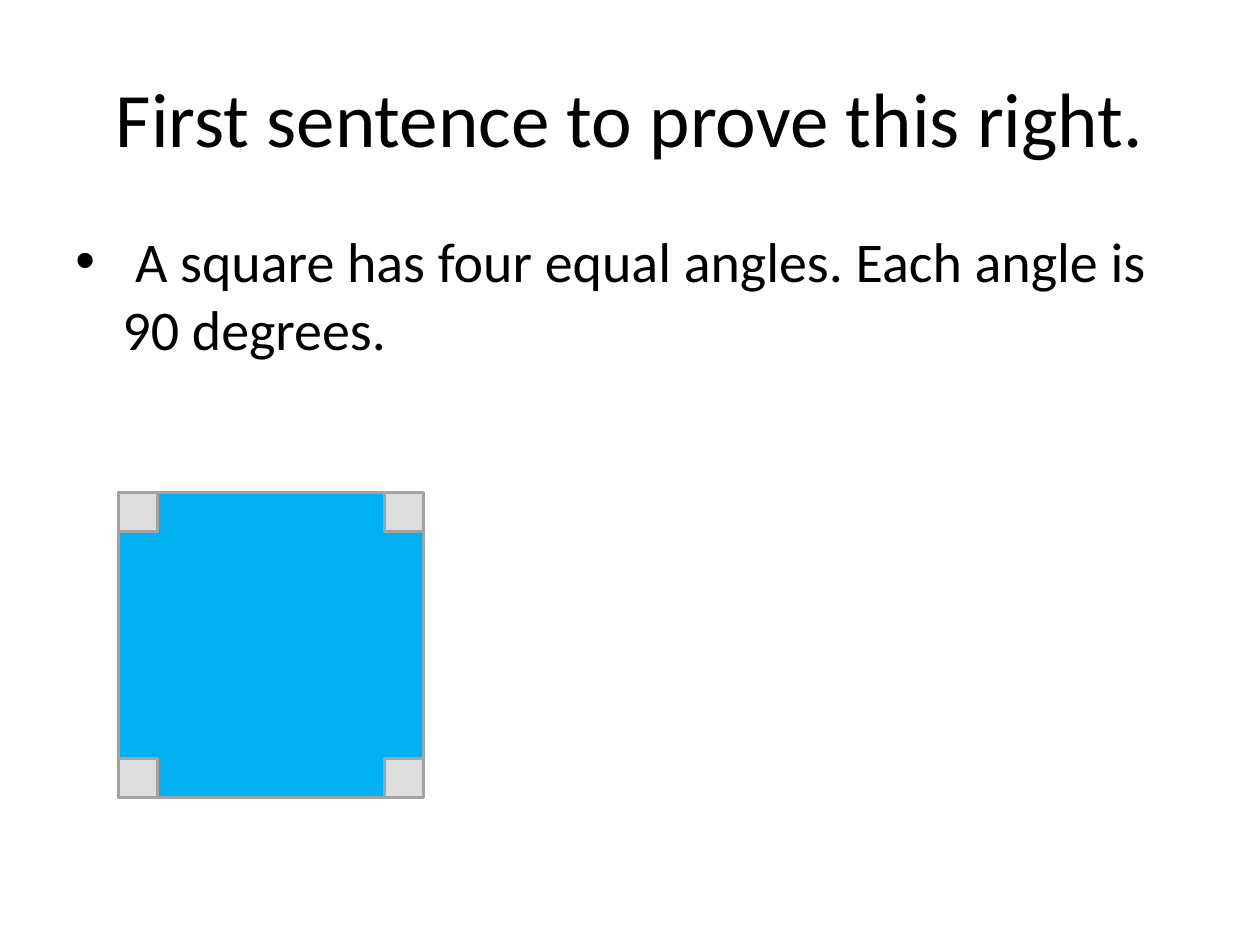
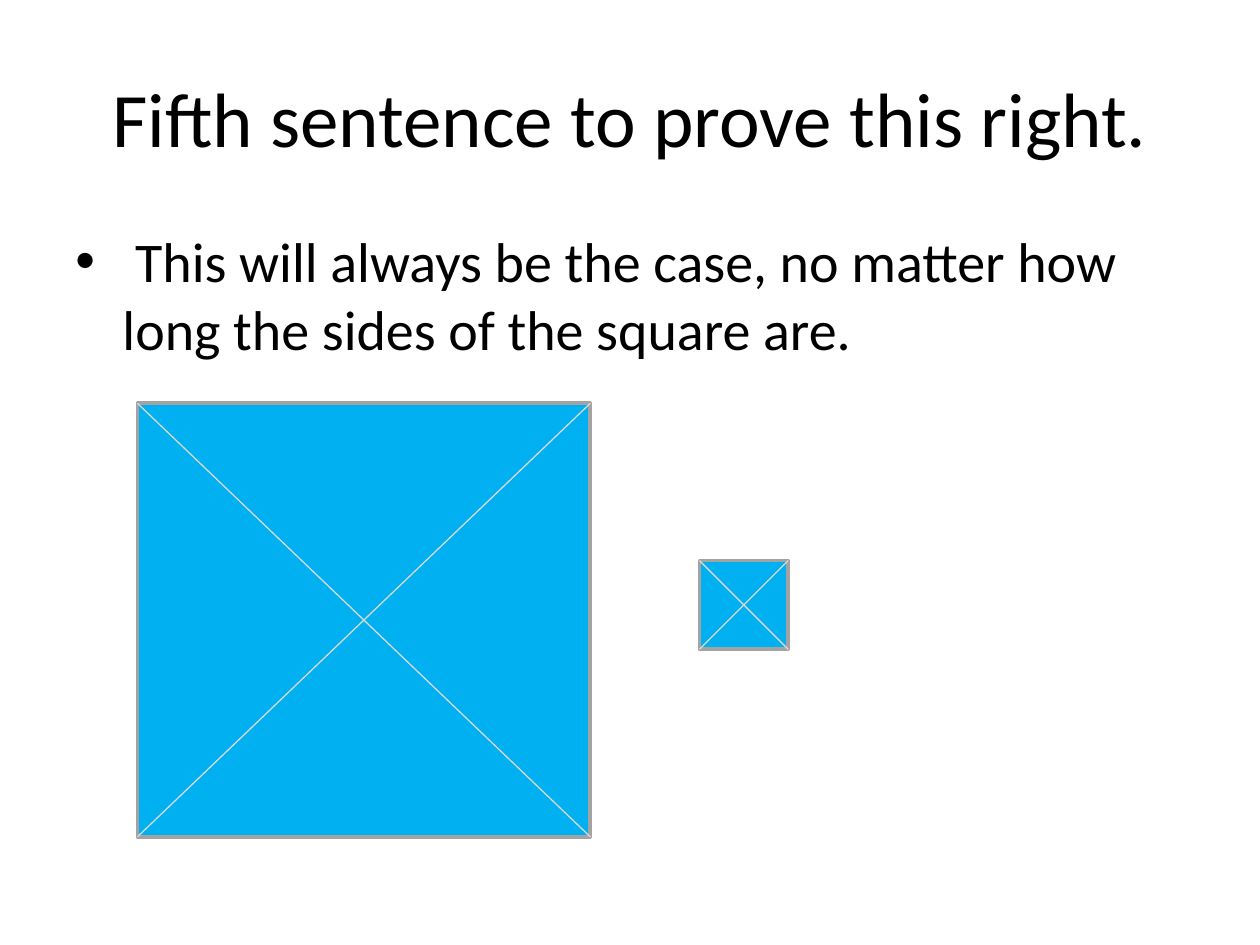
from dataclasses import dataclass
from itertools import product

from lxml.etree import SubElement
from pptx import Presentation
from pptx.dml.color import RGBColor
from pptx.enum.shapes import MSO_CONNECTOR, MSO_SHAPE
from pptx.enum.text import MSO_ANCHOR, PP_ALIGN
from pptx.oxml.ns import qn
from pptx.slide import Slide
from pptx.text.text import _Paragraph
from pptx.util import Cm, Pt

# Shared style
FONT = "Calibri"
BLACK, BLUE, OUTLINE = "000000", "00B0F0", "A3A3A3"
CORNER_FILL, DIAGONAL = "DDDDDD", "D8D8D8"
LEFT, WIDTH = 1.27, 22.86
INDENT = Cm(0.95)


@dataclass(frozen=True)
class Box:
    """A rectangle measured in centimetres."""
    left: float
    top: float
    width: float
    height: float

    @property
    def right(self) -> float:
        return self.left + self.width

    @property
    def bottom(self) -> float:
        return self.top + self.height

    def lengths(self) -> tuple[Cm, Cm, Cm, Cm]:
        return Cm(self.left), Cm(self.top), Cm(self.width), Cm(self.height)


TITLE_BOX = Box(LEFT, 0.76, WIDTH, 3.18)
BODY_BOX = Box(LEFT, 4.45, WIDTH, 12.57)


def rgb(color: str) -> RGBColor:
    return RGBColor.from_string(color)


def add_run(p: _Paragraph, text: str, size: int) -> None:
    r = p.add_run()
    r.text = text
    r.font.name, r.font.size = FONT, Pt(size)
    r.font.color.rgb = rgb(BLACK)


def add_bullet(p: _Paragraph) -> None:
    """Give the paragraph a hanging bullet and proportional space before."""
    pPr = p._p.get_or_add_pPr()
    pPr.set("marL", str(INDENT))
    pPr.set("indent", str(-INDENT))
    SubElement(SubElement(pPr, qn("a:spcBef")), qn("a:spcPct")).set("val", "20000")
    SubElement(pPr, qn("a:buFont")).set("typeface", "Arial")
    SubElement(pPr, qn("a:buChar")).set("char", "•")


def add_sentence_slide(prs: Presentation, title: str, sentence: str) -> Slide:
    s = prs.slides.add_slide(prs.slide_layouts.get_by_name("Title Only"))
    # Title
    sp = s.shapes.title
    sp.left, sp.top, sp.width, sp.height = TITLE_BOX.lengths()
    tf = sp.text_frame
    tf.vertical_anchor = MSO_ANCHOR.MIDDLE
    p = tf.paragraphs[0]
    p.alignment = PP_ALIGN.CENTER
    add_run(p, title, 44)
    # Bulleted sentence
    tf = s.shapes.add_textbox(*BODY_BOX.lengths()).text_frame
    tf.word_wrap = True
    p = tf.paragraphs[0]
    add_bullet(p)
    add_run(p, sentence, 32)
    return s


def add_square(s: Slide, box: Box, fill: str = BLUE) -> None:
    sp = s.shapes.add_shape(MSO_SHAPE.RECTANGLE, *box.lengths())
    sp.shadow.inherit = False
    sp.fill.solid()
    sp.fill.fore_color.rgb = rgb(fill)
    sp.line.color.rgb = rgb(OUTLINE)
    sp.line.width = Pt(2)


def add_corner_marks(s: Slide, box: Box, size: float) -> None:
    for top, left in product((box.top, box.bottom - size),
                             (box.left, box.right - size)):
        add_square(s, Box(left, top, size, size), CORNER_FILL)


def add_diagonals(s: Slide, box: Box) -> None:
    for start, end in ((box.top, box.bottom), (box.bottom, box.top)):
        line = s.shapes.add_connector(MSO_CONNECTOR.STRAIGHT, Cm(box.left), Cm(start),
                                      Cm(box.right), Cm(end))
        line.line.color.rgb = rgb(DIAGONAL)
        line.line.width = Pt(0.75)
        SubElement(line._element.spPr, qn("a:effectLst"))


def main() -> None:
    prs = Presentation()
    prs.slide_width, prs.slide_height = Cm(25.4), Cm(19.05)

    # Four right angles
    s = add_sentence_slide(prs, "First sentence to prove this right.",
                           " A square has four equal angles. Each angle is 90 degrees.")
    square = Box(2.39, 9.93, 6.15, 6.15)
    add_square(s, square)
    add_corner_marks(s, square, 0.79)

    # Diagonals of a large and a small square
    s = add_sentence_slide(prs, "Fifth sentence to prove this right.",
                           " This will always be the case, no matter how long "
                           "the sides of the square are.")
    for square in (Box(2.77, 8.13, 9.13, 8.74), Box(14.1, 11.3, 1.79, 1.79)):
        add_square(s, square)
        add_diagonals(s, square)

    prs.save("out.pptx")


if __name__ == "__main__":
    main()
